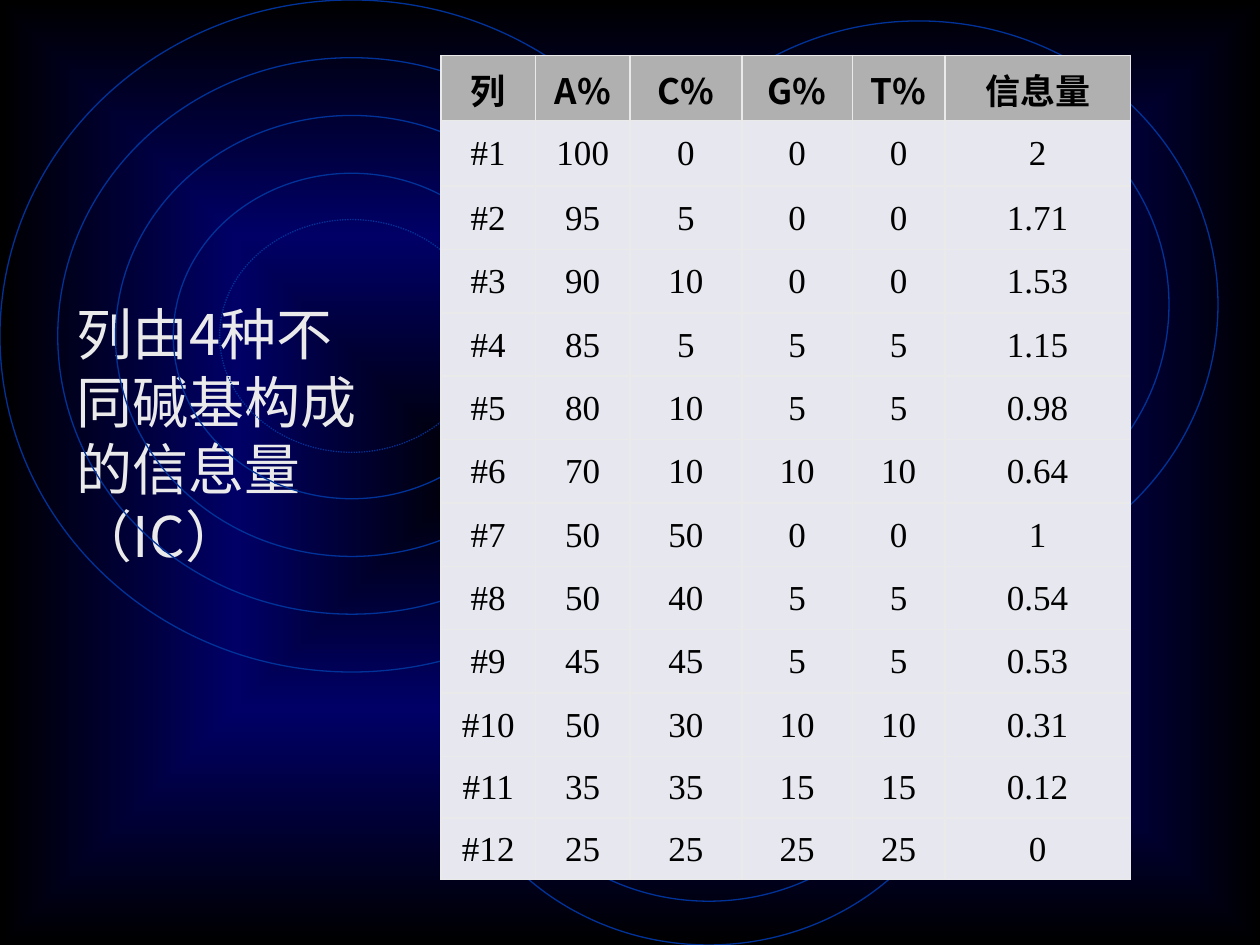
"""Build a slide with a table of information content for base compositions."""
from lxml.etree import SubElement
from pptx import Presentation
from pptx.dml.color import RGBColor
from pptx.enum.dml import MSO_LINE
from pptx.enum.shapes import MSO_SHAPE
from pptx.enum.text import MSO_ANCHOR, MSO_AUTO_SIZE, PP_ALIGN
from pptx.oxml import parse_xml
from pptx.oxml.ns import nsdecls, qn
from pptx.util import Pt

COLORS = {"edge": "000000", "glow": "000066", "ring": "003399", "title": "EAEAEA",
          "border": "EAEAEA", "header": "B0B0B0", "body": "E7E8EF", "text": "000000"}
SANS, SERIF = "Noto Sans CJK SC", "Times New Roman"


def rgb(name):
    return RGBColor.from_string(COLORS[name])


def set_font(p, name, size, color, bold=False):
    p.font.size, p.font.bold, p.font.name = Pt(size), bold, name
    p.font.color.rgb = rgb(color)
    SubElement(p.font._element, qn("a:ea"), typeface=name)


prs = Presentation()
prs.slide_width, prs.slide_height = Pt(720), Pt(540)
s = prs.slides.add_slide(prs.slide_layouts[5])

s.background.fill.gradient()
grad = s._element.find(".//" + qn("a:gradFill"))
stops = "".join(
    f'<a:gs pos="{pos}"><a:srgbClr val="{COLORS[name]}"/></a:gs>'
    for pos, name in [(0, "edge"), (50000, "glow"), (100000, "edge")])
grad.getparent().replace(grad, parse_xml(
    f'<a:gradFill {nsdecls("a")} rotWithShape="1"><a:gsLst>{stops}</a:gsLst>'
    '<a:path path="shape"><a:fillToRect l="50000" t="50000" r="50000" b="50000"/></a:path>'
    '</a:gradFill>'))

ring_sets = [(0, 0, 402, 384, 33, 125.5),
             (252, 252, 306, 288, 25, 95),
             (354, 12, 342, 324, 28, 106.5)]
for left, top, width, height, step, dotted in ring_sets:
    for inset in [0, step, 2 * step, 3 * step, dotted]:
        ring = s.shapes.add_shape(
            MSO_SHAPE.OVAL, Pt(left + inset), Pt(top + inset),
            Pt(width - 2 * inset), Pt(height - 2 * inset))
        ring.shadow.inherit = False
        ring.fill.background()
        ring.line.color.rgb = rgb("ring")
        ring.line.width = Pt(0.75)
        if inset == dotted:
            ring.line.dash_style = MSO_LINE.ROUND_DOT

header = ["列", "A%", "C%", "G%", "T%", "信息量"]
compositions = [
    (100, 0, 0, 0, 2),
    (95, 5, 0, 0, 1.71),
    (90, 10, 0, 0, 1.53),
    (85, 5, 5, 5, 1.15),
    (80, 10, 5, 5, 0.98),
    (70, 10, 10, 10, 0.64),
    (50, 50, 0, 0, 1),
    (50, 40, 5, 5, 0.54),
    (45, 45, 5, 5, 0.53),
    (50, 30, 10, 10, 0.31),
    (35, 35, 15, 15, 0.12),
    (25, 25, 25, 25, 0),
]
rows = [header] + [[f"#{n}", *values] for n, values in enumerate(compositions, 1)]
col_widths = [54, 54, 64, 63.2, 52.8, 106]
row_heights = [37.4] * 2 + [36.2] * 9 + [35.2] * 2
table = s.shapes.add_table(len(rows), len(header), Pt(252), Pt(31.6),
                           Pt(sum(col_widths)), Pt(sum(row_heights))).table
table.horz_banding = False
for col, width in zip(table.columns, col_widths):
    col.width = Pt(width)
for row, height, values in zip(table.rows, row_heights, rows):
    row.height = Pt(height)
    is_header = values is header
    for cell, value in zip(row.cells, values):
        cell.text = str(value)
        cell.vertical_anchor = MSO_ANCHOR.MIDDLE
        cell.margin_left = cell.margin_right = cell.margin_top = Pt(0.75)
        cell.margin_bottom = 0
        p = cell.text_frame.paragraphs[0]
        p.alignment = PP_ALIGN.CENTER
        set_font(p, SANS if is_header else SERIF, 20, "text", is_header)
        for side in ["lnL", "lnR", "lnT", "lnB"]:
            line = SubElement(cell._tc.get_or_add_tcPr(), qn("a:" + side), w=str(Pt(1)))
            SubElement(SubElement(line, qn("a:solidFill")), qn("a:srgbClr"),
                       val=COLORS["border"])
        cell.fill.solid()
        cell.fill.fore_color.rgb = rgb("header" if is_header else "body")

title = s.shapes.title
title.left, title.top, title.width, title.height = Pt(36.7), Pt(167.8), Pt(175.7), Pt(162)
tf = title.text_frame
tf.text = "列由4种不同碱基构成的信息量（IC）"
tf.word_wrap = True
tf.auto_size = MSO_AUTO_SIZE.NONE
tf.vertical_anchor = MSO_ANCHOR.TOP
p = tf.paragraphs[0]
p.alignment = PP_ALIGN.LEFT
p.line_spacing = Pt(38.4)
set_font(p, SANS, 32, "title")

prs.save("out.pptx")
